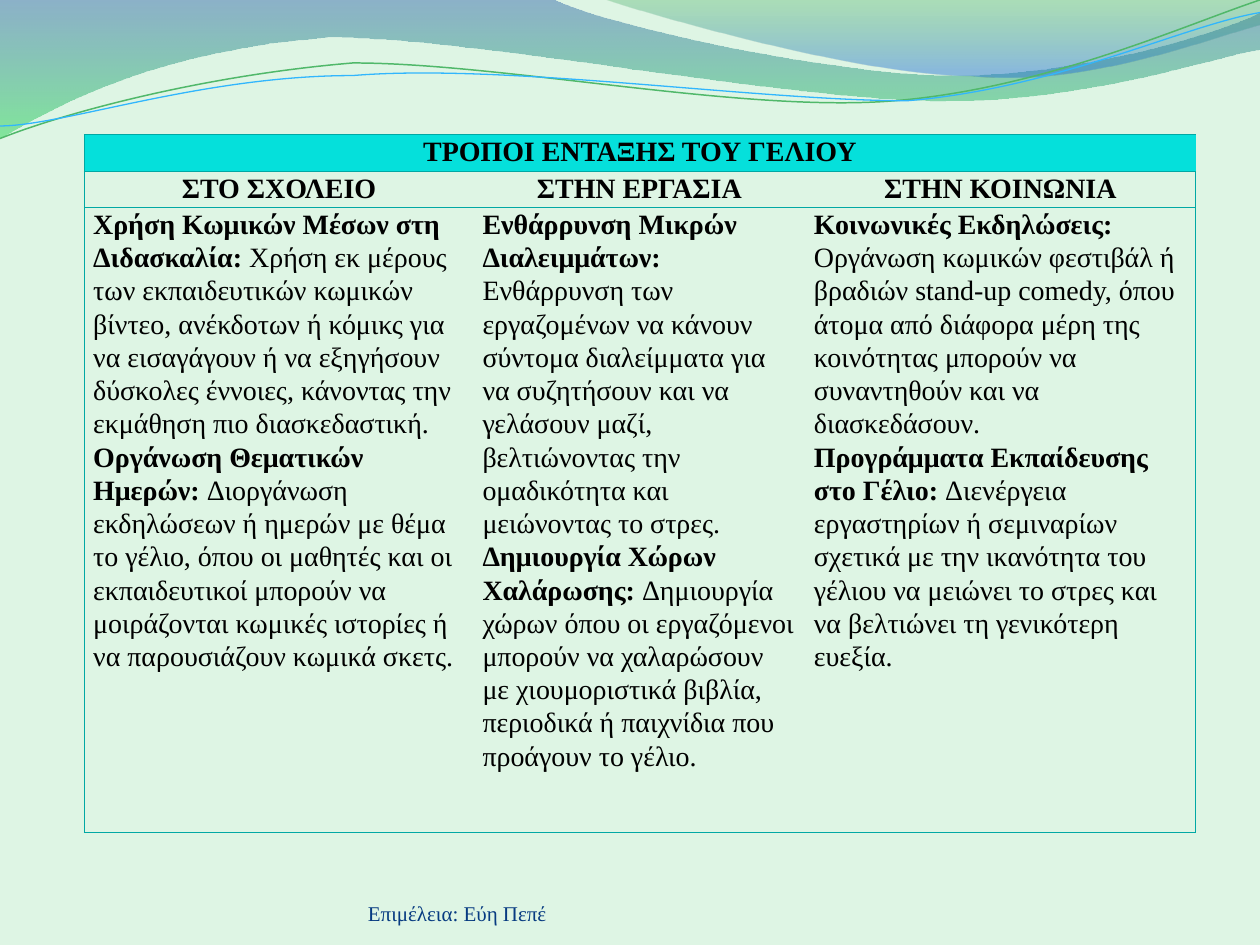
from dataclasses import dataclass
from lxml import etree
from pptx import Presentation
from pptx import util as u
from pptx.dml.color import RGBColor
from pptx.enum import text
from pptx.oxml.ns import qn

NO_STYLE = "{2D5ABB26-0587-4C30-8999-92F81FD0307C}"
HEADING = "ΤΡΟΠΟΙ ΕΝΤΑΞΗΣ ΤΟΥ ΓΕΛΙΟΥ"
SETTINGS = {
    "ΣΤΟ ΣΧΟΛΕΙΟ": [
        ("Χρήση Κωμικών Μέσων στη Διδασκαλία: ",
         "Χρήση εκ μέρους των εκπαιδευτικών κωμικών βίντεο, ανέκδοτων ή κόμικς για να "
         "εισαγάγουν ή να εξηγήσουν δύσκολες έννοιες, κάνοντας την εκμάθηση πιο διασκεδαστική."),
        ("Οργάνωση Θεματικών Ημερών: ",
         "Διοργάνωση εκδηλώσεων ή ημερών με θέμα το γέλιο, όπου οι μαθητές και οι εκπαιδευτικοί "
         "μπορούν να μοιράζονται κωμικές ιστορίες ή να παρουσιάζουν κωμικά σκετς."),
    ],
    "ΣΤΗΝ ΕΡΓΑΣΙΑ": [
        ("Ενθάρρυνση Μικρών Διαλειμμάτων: ",
         "Ενθάρρυνση των εργαζομένων να κάνουν σύντομα διαλείμματα για να συζητήσουν και να "
         "γελάσουν μαζί, βελτιώνοντας την ομαδικότητα και μειώνοντας το στρες."),
        ("Δημιουργία Χώρων Χαλάρωσης: ",
         "Δημιουργία χώρων όπου οι εργαζόμενοι μπορούν να χαλαρώσουν με χιουμοριστικά βιβλία, "
         "περιοδικά ή παιχνίδια που προάγουν το γέλιο."),
    ],
    "ΣΤΗΝ ΚΟΙΝΩΝΙΑ": [
        ("Κοινωνικές Εκδηλώσεις: ",
         "Οργάνωση κωμικών φεστιβάλ ή βραδιών stand-up comedy, όπου άτομα από διάφορα μέρη της "
         "κοινότητας μπορούν να συναντηθούν και να διασκεδάσουν."),
        ("Προγράμματα Εκπαίδευσης στο Γέλιο: ",
         "Διενέργεια εργαστηρίων ή σεμιναρίων σχετικά με την ικανότητα του γέλιου να μειώνει "
         "το στρες και να βελτιώνει τη γενικότερη ευεξία."),
    ],
}
LEFT_WAVE = [(44, -.1), (47.6, 1.7, 66.4, 6.3, 75.8, 6.3), (85.3, 6.3, 95.8, 2.6, 100, .9),
             (100.1, 3.6), (98.3, 4.4, 87, 7.6, 74.6, 7.5), (62.2, 7.5, 38.2, 2.8, 25.7, 3.4),
             (12.9, 3.6, 4.6, 8.3, -.1, 11.3), (0, 0)]
RIGHT_WAVE = [(50.9, 1.1, 68.2, 6.2, 76.9, 6.5), (85.6, 6.9, 96.1, 3.2, 100, 2.1),
              (100, 0), (47.9, -.1)]
GREEN_LINE = [(4.8, 9.3, 15.8, 5.7, 27.7, 5.2), (39.5, 4.7, 59.3, 8.9, 71.3, 8),
              (83.3, 7.1, 93.8, 1.5, 99.8, -.2)]
BLUE_LINE = [(4.7, 9.6, 16.4, 6.1, 28.3, 5.6), (40.3, 5.1, 59.7, 8.4, 71.7, 7.5),
             (83.6, 6.7, 94.1, 2.1, 100, .6)]


def color(value):
    return RGBColor.from_string(value)


def grid(count):
    return u.Inches(count / 10)


@dataclass
class Deck:
    """Style and current slide, measured on a grid of 100 columns by 75 rows."""
    slide: object
    font: str = "Times New Roman"
    ink: str = "000000"
    rule: str = "01A8A4"
    header: str = "05E0DB"

    def background(self, value):
        fill = self.slide.background.fill
        fill.solid()
        fill.fore_color.rgb = color(value)

    def run(self, paragraph, words, size=16, value=None, bold=False):
        run = paragraph.add_run()
        run.text = words
        run.font.name, run.font.size, run.font.bold = self.font, u.Pt(size), bold
        run.font.color.rgb = color(value or self.ink)

    def curve(self, start, segments, closed):
        points = [pair for part in segments for pair in zip(part[::2], part[1::2])]
        builder = self.slide.shapes.build_freeform(*start, scale=grid(1))
        builder.add_line_segments(points, close=closed)
        shape = builder.convert_to_shape()
        shape.shadow.inherit = False
        lines = iter(list(shape._element.iter(qn("a:lnTo"))))
        for part in segments:
            first = next(lines)
            if len(part) == 6:
                first.tag = qn("a:cubicBezTo")
                for _ in range(2):
                    extra = next(lines)
                    first.append(extra[0])
                    extra.getparent().remove(extra)
        return shape

    def wave(self, start, segments, stops):
        shape = self.curve(start, segments, True)
        shape.line.fill.background()
        shape.fill.gradient()
        gradient = shape._element.spPr.find(qn("a:gradFill"))
        gradient.find(qn("a:lin")).set("ang", "5400000")
        stop_list = gradient.find(qn("a:gsLst"))
        for old in list(stop_list):
            stop_list.remove(old)
        for position, value, opacity in stops:
            stop = etree.SubElement(stop_list, qn("a:gs"), pos=str(position * 1000))
            tint = etree.SubElement(stop, qn("a:srgbClr"), val=value)
            etree.SubElement(tint, qn("a:alpha"), val=str(opacity * 1000))

    def stroke(self, start, segments, value, width):
        shape = self.curve(start, segments, False)
        shape.fill.background()
        shape.line.color.rgb = color(value)
        shape.line.width = u.Pt(width)

    def label(self, left, top, width, height, words, size, value):
        frame = self.slide.shapes.add_textbox(*map(grid, (left, top, width, height))).text_frame
        frame.word_wrap = True
        frame.vertical_anchor = text.MSO_ANCHOR.BOTTOM
        frame.margin_left = frame.margin_top = frame.margin_right = frame.margin_bottom = 0
        self.run(frame.paragraphs[0], words, size, value)

    def cell(self, cell, paragraphs, sides, centred=False, fill=None):
        cell.margin_left = cell.margin_right = grid(.7)
        cell.margin_top = cell.margin_bottom = 0
        frame = cell.text_frame
        for index, (lead, rest) in enumerate(paragraphs):
            paragraph = frame.add_paragraph() if index else frame.paragraphs[0]
            paragraph.line_spacing = 1.07
            paragraph.alignment = text.PP_ALIGN.CENTER if centred else text.PP_ALIGN.LEFT
            self.run(paragraph, lead, bold=True)
            if rest:
                self.run(paragraph, rest)
        if fill:
            cell.fill.solid()
            cell.fill.fore_color.rgb = color(fill)
        else:
            cell.fill.background()
        properties = cell._tc.get_or_add_tcPr()
        for index, side in enumerate(sides):
            border = etree.Element(qn(f"a:ln{side}"), w=str(u.Pt(.75)))
            solid = etree.SubElement(border, qn("a:solidFill"))
            etree.SubElement(solid, qn("a:srgbClr"), val=self.rule)
            properties.insert(index, border)

    def table(self, left, top, columns, rows, heading, settings):
        frame = self.slide.shapes.add_table(len(rows), len(columns), grid(left), grid(top),
                                            grid(sum(columns)), grid(sum(rows)))
        table = frame.table
        table.first_row = table.horz_banding = False
        table._tbl.tblPr.find(qn("a:tableStyleId")).text = NO_STYLE
        for column, width in zip(table.columns, columns):
            column.width = grid(width)
        for row, height in zip(table.rows, rows):
            row.height = grid(height)
        table.cell(0, 0).merge(table.cell(0, len(columns) - 1))
        for index, (name, ideas) in enumerate(settings.items()):
            edge = "L" * (index == 0) + "R" * (index == len(columns) - 1)
            title = [] if index else [(heading, "")]
            self.cell(table.cell(0, index), title, edge + "TB", True, self.header)
            self.cell(table.cell(1, index), [(name, "")], edge + "TB", True)
            self.cell(table.cell(2, index), ideas, edge + "TB")


def main():
    presentation = Presentation()
    presentation.slide_width, presentation.slide_height = grid(100), grid(75)
    deck = Deck(presentation.slides.add_slide(presentation.slide_layouts[6]))
    deck.background("DEF5E4")
    deck.wave((0, 0), LEFT_WAVE, [(0, "2960A7", 45), (100, "35DA5E", 55)])
    deck.wave((47.9, -.1), RIGHT_WAVE, [(0, "36A752", 30), (80, "2472D3", 45)])
    deck.stroke((0, 11.1), GREEN_LINE, "50B86A", .85)
    deck.stroke((0, 10.4), BLUE_LINE, "31B6FD", .75)
    deck.label(29.2, 69.5, 36.7, 4, "Επιμέλεια: Εύη Πεπέ", 12, "073B81")
    deck.table(6.7, 10.7, (30.9, 26.3, 31), (2.9, 2.6, 49.6), HEADING, SETTINGS)
    presentation.save("out.pptx")


if __name__ == "__main__":
    main()
